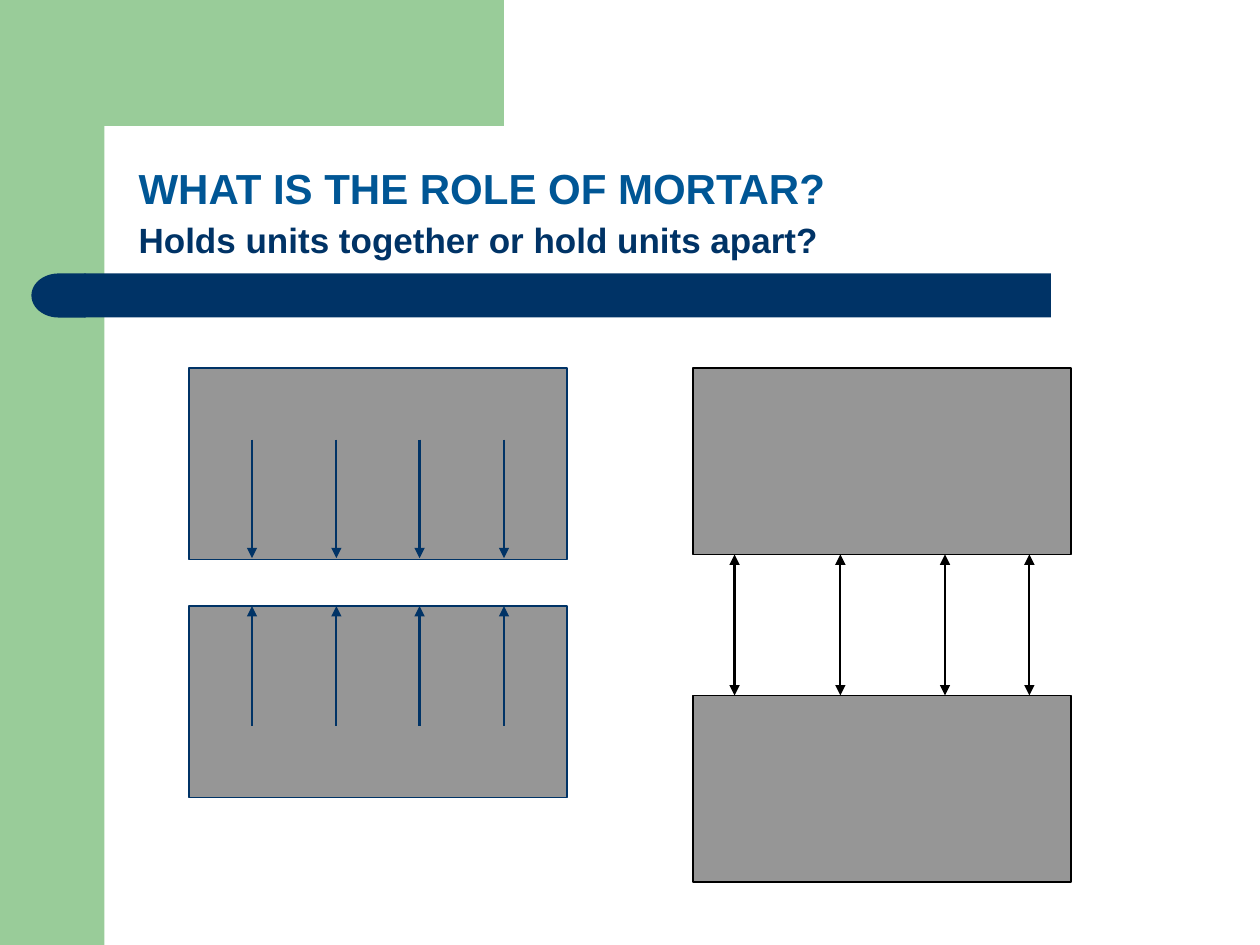
"""Build a slide that contrasts two views of the role of mortar between masonry units."""
import math

import lxml.etree
import pptx
import pptx.dml.color
import pptx.enum.shapes
import pptx.enum.text
import pptx.oxml.ns
import pptx.util

Inches = pptx.util.Inches
RGBColor = pptx.dml.color.RGBColor
Shapes = pptx.enum.shapes.MSO_SHAPE

GREEN = RGBColor(0x99, 0xCC, 0x99)
NAVY = RGBColor(0x00, 0x33, 0x66)
BLUE = RGBColor(0x00, 0x56, 0x95)
GRAY = RGBColor(0x96, 0x96, 0x96)
BLACK = RGBColor(0x00, 0x00, 0x00)


def add_run(paragraph, text, size, color):
    """Append bold Arial text to a paragraph."""
    run = paragraph.add_run()
    run.text = text
    run.font.name = "Arial"
    run.font.size = pptx.util.Pt(size)
    run.font.bold = True
    run.font.color.rgb = color


def paint(shape, fill, line=None):
    """Give a shape a flat fill and an optional thin outline."""
    shape.shadow.inherit = False
    shape.fill.solid()
    shape.fill.fore_color.rgb = fill
    if line is None:
        shape.line.fill.background()
    else:
        shape.line.color.rgb = line
        shape.line.width = pptx.util.Pt(0.75)


presentation = pptx.Presentation()
presentation.slide_width = Inches(10)
presentation.slide_height = Inches(7.5)
slide = presentation.slides.add_slide(presentation.slide_layouts[5])
shapes = slide.shapes

side_band = shapes.add_shape(Shapes.RECTANGLE, 0, 0, Inches(0.83), Inches(7.5))
paint(side_band, GREEN)

arc = [
    (1.16 - 0.33 * math.sin(math.radians(angle)), 1.16 - 0.33 * math.cos(math.radians(angle)))
    for angle in range(0, 91, 5)
]
corner_points = [(3.5, 0), (3.5, 0.83), *arc, (0.83, 1.28), (0.5, 1.28), (0.5, 0)]
builder = shapes.build_freeform(*corner_points[0], scale=Inches(1))
builder.add_line_segments(corner_points[1:], close=True)
paint(builder.convert_to_shape(), GREEN)

title_bar = shapes.add_shape(
    Shapes.RECTANGLE, Inches(0.67), Inches(2.17), Inches(7.67), Inches(0.35)
)
paint(title_bar, NAVY)
bar_cap = shapes.add_shape(
    Shapes.FLOWCHART_DELAY, Inches(0.25), Inches(2.17), Inches(0.43), Inches(0.35)
)
bar_cap._element.spPr.xfrm.set("flipH", "1")
paint(bar_cap, NAVY)

title = shapes.title
title.left, title.top = Inches(1), Inches(1)
title.width, title.height = Inches(8.33), Inches(1.12)
title.text_frame.word_wrap = True
title.text_frame.auto_size = pptx.enum.text.MSO_AUTO_SIZE.NONE
title.text_frame.vertical_anchor = pptx.enum.text.MSO_ANCHOR.BOTTOM
paragraph = title.text_frame.paragraphs[0]
paragraph.alignment = pptx.enum.text.PP_ALIGN.LEFT
paragraph.line_spacing = 1.15
add_run(paragraph, "WHAT IS THE ROLE OF MORTAR?", size=24, color=BLUE)
paragraph.add_line_break()
add_run(paragraph, "Holds units together or hold units apart?", size=20, color=NAVY)

units = [
    (1.5, 2.92, 1.52, NAVY),
    (1.5, 4.81, 1.52, NAVY),
    (5.5, 2.92, 1.48, BLACK),
    (5.5, 5.52, 1.48, BLACK),
]
for left, top, height, outline in units:
    unit = shapes.add_shape(
        Shapes.RECTANGLE, Inches(left), Inches(top), Inches(3), Inches(height)
    )
    paint(unit, GRAY, line=outline)

together_columns = [2, 2.67, 3.33, 4]
apart_columns = [5.83, 6.67, 7.5, 8.17]
arrow_rows = [
    (together_columns, 3.49, 4.43, NAVY, ["tailEnd"]),
    (together_columns, 5.76, 4.81, NAVY, ["tailEnd"]),
    (apart_columns, 4.4, 5.52, BLACK, ["headEnd", "tailEnd"]),
]
for columns, start, end, color, arrowheads in arrow_rows:
    for x in columns:
        arrow = shapes.add_connector(
            pptx.enum.shapes.MSO_CONNECTOR.STRAIGHT,
            Inches(x), Inches(start), Inches(x), Inches(end),
        )
        arrow.line.color.rgb = color
        arrow.line.width = pptx.util.Pt(1.25)
        line_element = arrow.line._get_or_add_ln()
        for arrowhead in arrowheads:
            lxml.etree.SubElement(
                line_element, pptx.oxml.ns.qn(f"a:{arrowhead}"), type="triangle"
            )
        lxml.etree.SubElement(arrow._element.spPr, pptx.oxml.ns.qn("a:effectLst"))

presentation.save("out.pptx")
